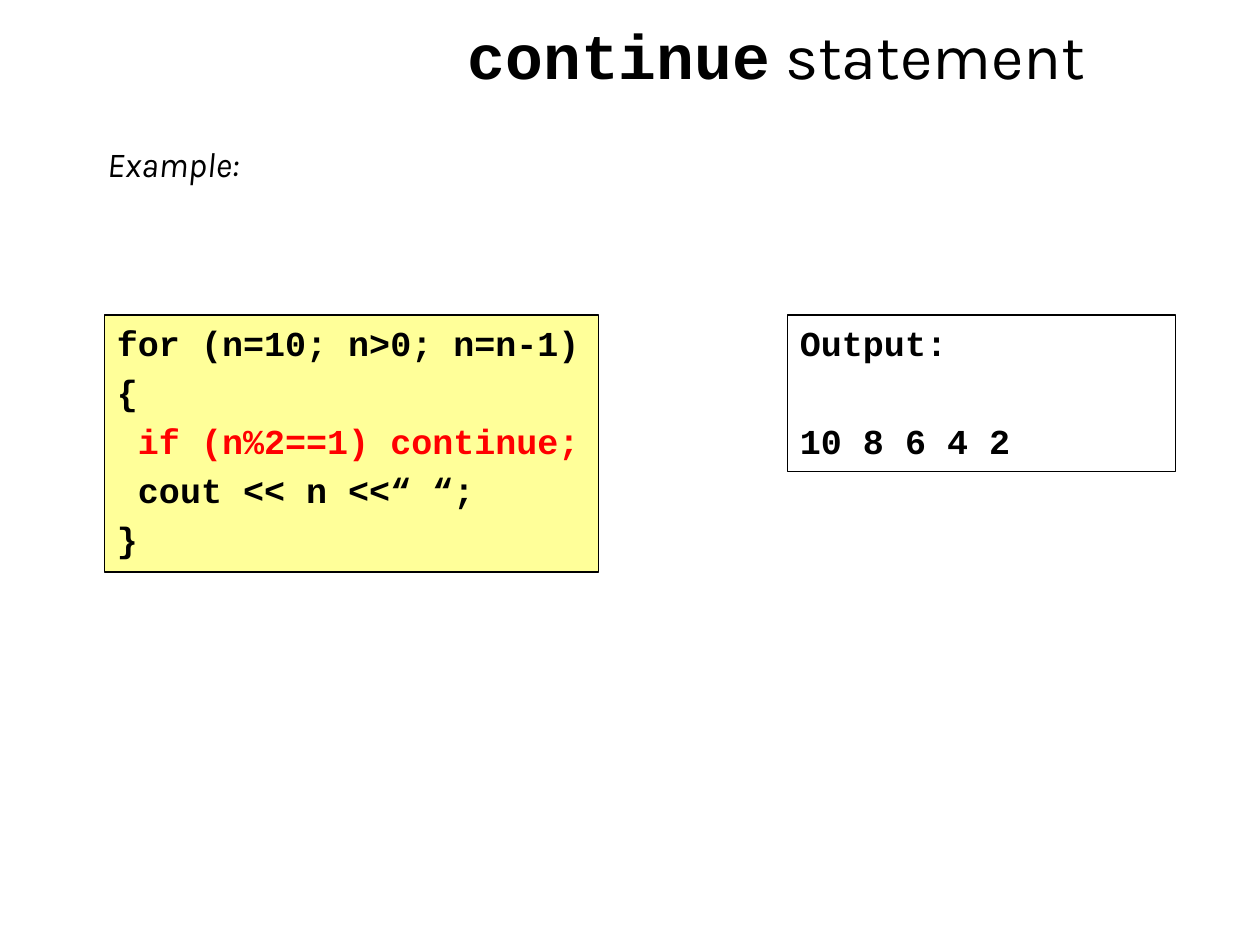
from dataclasses import dataclass
from lxml.etree import SubElement
from pptx import Presentation
from pptx.dml.color import RGBColor
from pptx.enum.shapes import MSO_SHAPE
from pptx.enum.text import MSO_ANCHOR, MSO_AUTO_SIZE, PP_ALIGN
from pptx.oxml.ns import qn
from pptx.util import Inches, Pt


@dataclass(frozen=True)
class Theme:
    """Colours, fonts and sizes of the slide."""
    ink: RGBColor = RGBColor(0, 0, 0)
    paper: RGBColor = RGBColor(255, 255, 255)
    note: RGBColor = RGBColor(255, 255, 153)
    alert: RGBColor = RGBColor(255, 0, 0)
    prose: str = "Karla"
    code: str = "Courier New"
    head: Pt = Pt(36)
    text: Pt = Pt(20)
    gap: Pt = Pt(4)
    skip: Pt = Pt(32.4)
    line: Pt = Pt(0.75)


THEME = Theme()


def style(font, name, size, color=THEME.ink, bold=False):
    """Set the look of a font."""
    font.name, font.size, font.bold = name, size, bold
    font.color.rgb = color


def place(shape, box, fill):
    """Move a shape to its box, fill it and set its text at the top."""
    shape.left, shape.top, shape.width, shape.height = map(Inches, box)
    shape.fill.solid()
    shape.fill.fore_color.rgb = fill
    frame = shape.text_frame
    frame.word_wrap = True
    frame.auto_size = MSO_AUTO_SIZE.NONE
    frame.vertical_anchor = MSO_ANCHOR.TOP


def add_title(slide, box):
    """Fill the title placeholder."""
    title = slide.shapes.title
    place(title, box, THEME.paper)
    para = title.text_frame.paragraphs[0]
    para.alignment = PP_ALIGN.CENTER
    for text, name, bold in (("continue", THEME.code, True),
                             (" statement", THEME.prose, False)):
        run = para.add_run()
        run.text = text
        style(run.font, name, THEME.head, bold=bold)


def add_lead(slide, box):
    """Fill the body placeholder with the lead line."""
    body = slide.placeholders[1]
    place(body, box, THEME.paper)
    frame = body.text_frame
    frame.text = "Example:"
    para = frame.paragraphs[0]
    props = para._p.get_or_add_pPr()
    props.set("marL", str(Inches(0.38)))
    props.set("indent", str(Inches(-0.38)))
    SubElement(props, qn("a:buNone"))
    para.space_before = Pt(0)
    style(para.font, THEME.prose, THEME.text)
    para.font.italic = True


def add_panel(slide, box, fill, lines, gap):
    """Draw a framed panel of code lines, each with its colour."""
    panel = slide.shapes.add_shape(MSO_SHAPE.RECTANGLE, *map(Inches, box))
    place(panel, box, fill)
    panel.shadow.inherit = False
    panel.line.color.rgb = THEME.ink
    panel.line.width = THEME.line
    frame = panel.text_frame
    for i, (text, color) in enumerate(lines):
        para = frame.add_paragraph() if i else frame.paragraphs[0]
        para.text = text
        para.alignment = PP_ALIGN.LEFT
        para.space_before = gap if i else Pt(0)
        style(para.font, THEME.code, THEME.text, color, True)


def main():
    """Build and save the slide."""
    deck = Presentation()
    deck.slide_width, deck.slide_height = Inches(10), Inches(7.5)
    slide = deck.slides.add_slide(deck.slide_layouts[1])
    add_lead(slide, (0.75, 1.08, 8.75, 0.5))
    add_title(slide, (3, 0.08, 6.33, 0.83))
    loop = (
        ("for (n=10; n>0; n=n-1)", THEME.ink),
        ("{", THEME.ink),
        (" if (n%2==1) continue;", THEME.alert),
        (" cout << n <<“ “;", THEME.ink),
        ("}", THEME.ink),
    )
    add_panel(slide, (0.83, 2.5, 3.92, 2.04), THEME.note, loop, THEME.gap)
    shown = (("Output:", THEME.ink), ("10 8 6 4 2", THEME.ink))
    add_panel(slide, (6.25, 2.5, 3.08, 1.24), THEME.paper, shown, THEME.skip)
    deck.save("out.pptx")


if __name__ == "__main__":
    main()
